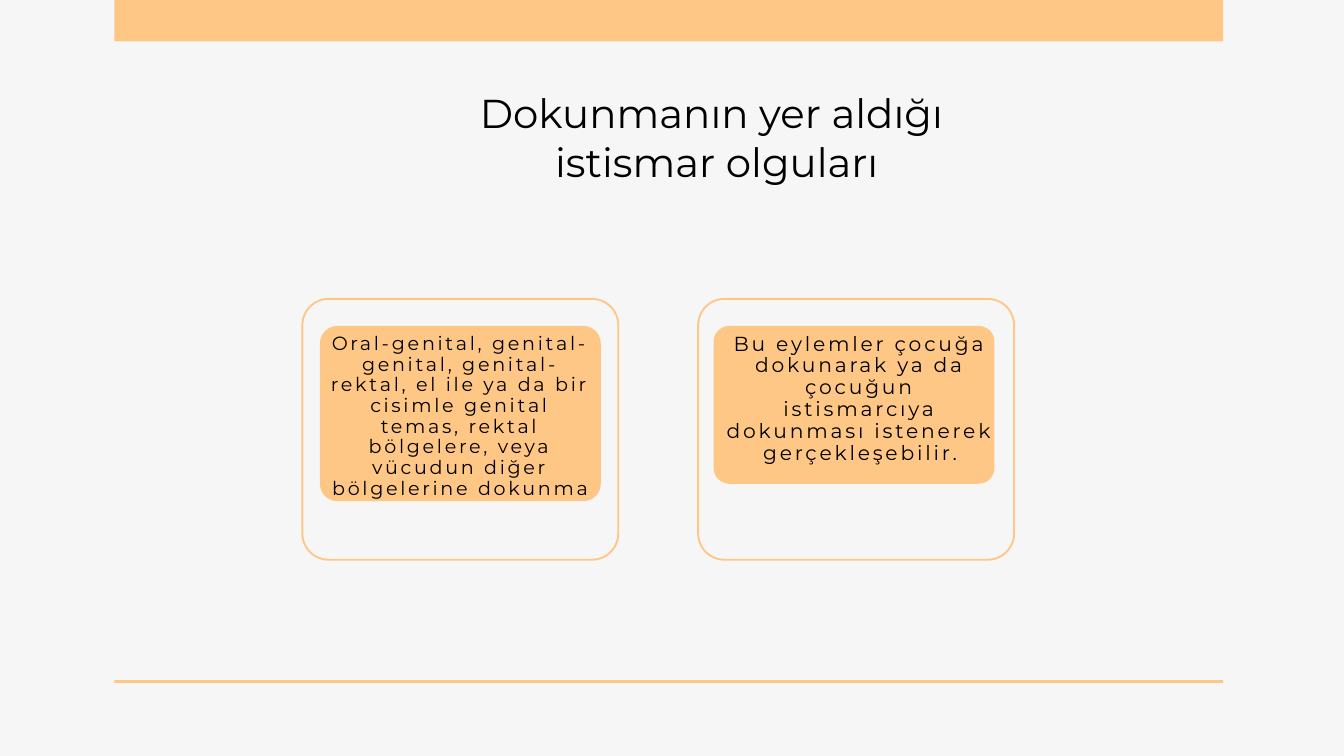
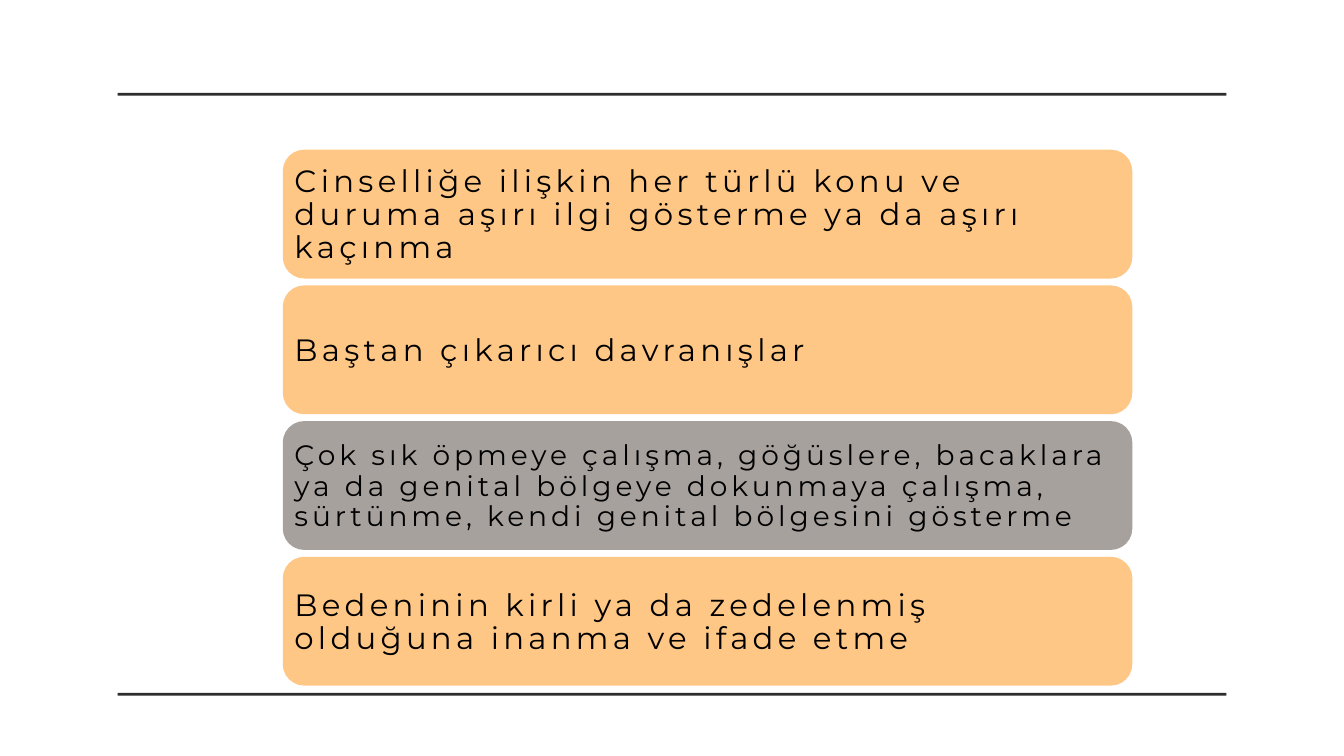
from pptx import Presentation
from pptx.dml.color import RGBColor
from pptx.enum.shapes import MSO_SHAPE
from pptx.enum.text import PP_ALIGN
from pptx.util import Cm, Pt

COLORS = {
    "paper": "F6F6F6", "white": "FFFFFF", "orange": "FFC786",
    "gray": "A7A19E", "dark": "2E2D2D", "text": "000000",
}
FONT = "Montserrat"

# Content
TITLE = ["Dokunmanın yer aldığı ", "istismar olguları"]
CARDS = [
    {
        "text": "Oral-genital, genital-genital, genital-rektal, el ile ya da bir cisimle "
                "genital temas, rektal bölgelere, veya vücudun diğer bölgelerine dokunma",
        "frame_left": 11.43, "note": (12.09, 12.32, 10.62, 6.63),
        "text_box": (12.34, 12.62, 10.11, 5.41), "style": "first_card",
    },
    {
        "text": "Bu eylemler çocuğa dokunarak ya da çocuğun istismarcıya "
                "dokunması istenerek gerçekleşebilir.",
        "frame_left": 26.39, "note": (26.97, 12.32, 10.62, 5.97),
        "text_box": (27.43, 12.6, 10.16, 4.93), "style": "second_card",
    },
]
# Text, number of lines, fill, text style
SIGNS = [
    ("Cinselliğe ilişkin her türlü konu ve duruma aşırı ilgi gösterme "
     "ya da aşırı kaçınma", 3, "orange", "sign"),
    ("Baştan çıkarıcı davranışlar", 1, "orange", "sign"),
    ("Çok sık öpmeye çalışma, göğüslere, bacaklara ya da genital bölgeye "
     "dokunmaya çalışma, sürtünme, kendi genital bölgesini gösterme",
     3, "gray", "long_sign"),
    ("Bedeninin kirli ya da zedelenmiş olduğuna inanma ve ifade etme",
     2, "orange", "sign"),
]

# Text styles: lengths in points
STYLES = {
    "title": {"size": 43.2, "line": 51.8, "tracking": 0, "align": PP_ALIGN.CENTER},
    "first_card": {"size": 20.5, "line": 22.1, "tracking": 2.9, "align": PP_ALIGN.CENTER},
    "second_card": {"size": 21.7, "line": 23.4, "tracking": 3, "align": PP_ALIGN.CENTER},
    "sign": {"size": 33, "line": 35.6, "tracking": 4.6, "align": PP_ALIGN.LEFT},
    "long_sign": {"size": 30.1, "line": 32.5, "tracking": 4.2, "align": PP_ALIGN.LEFT},
}

# Layout in centimetres
RULE_WIDTH, RULE_HEIGHT = 41.91, 0.11
FRAME_TOP, FRAME_WIDTH, FRAME_HEIGHT = 11.3, 11.94, 9.86
SIGN_LEFT, SIGN_TOP, SIGN_WIDTH, SIGN_HEIGHT = 10.69, 5.66, 32.11, 4.87
SIGN_PITCH, SIGN_PADDING, TEXT_DROP = 5.13, 0.44, 0.04


def rgb(name):
    return RGBColor.from_string(COLORS[name])


def add_slide(presentation, background):
    slide = presentation.slides.add_slide(presentation.slide_layouts[6])
    slide.background.fill.solid()
    slide.background.fill.fore_color.rgb = rgb(background)
    return slide


def add_block(slide, box, fill, radius=0.0, outline=None):
    kind = MSO_SHAPE.ROUNDED_RECTANGLE if radius else MSO_SHAPE.RECTANGLE
    shape = slide.shapes.add_shape(kind, *map(Cm, box))
    shape.shadow.inherit = False
    if radius:
        shape.adjustments[0] = radius / min(box[2:])
    shape.fill.solid()
    shape.fill.fore_color.rgb = rgb(fill)
    if outline:
        shape.line.color.rgb = rgb(outline)
        shape.line.width = Pt(2)
    else:
        shape.line.fill.background()
    return shape


def add_text(slide, box, lines, style_name):
    style = STYLES[style_name]
    frame = slide.shapes.add_textbox(*map(Cm, box)).text_frame
    frame_format = {"word_wrap": True, "margin_left": 0, "margin_top": 0,
                    "margin_right": 0, "margin_bottom": 0}
    for name, value in frame_format.items():
        setattr(frame, name, value)
    for index, line in enumerate(lines):
        paragraph = frame.add_paragraph() if index else frame.paragraphs[0]
        paragraph.alignment = style["align"]
        paragraph.line_spacing = Pt(style["line"])
        run = paragraph.add_run()
        run.text = line
        for name, value in {"name": FONT, "size": Pt(style["size"])}.items():
            setattr(run.font, name, value)
        run.font.color.rgb = rgb("text")
        if style["tracking"]:
            run._r.get_or_add_rPr().set("spc", str(round(style["tracking"] * 100)))


def add_rule(slide, left, top, color, height=RULE_HEIGHT):
    add_block(slide, (left, top, RULE_WIDTH, height), color)


def build_cases(presentation):
    slide = add_slide(presentation, "paper")
    # Top band and bottom rule
    add_rule(slide, 4.32, 0, "orange", height=1.57)
    add_rule(slide, 4.32, 25.71, "orange")
    # Outlined cards with a filled note
    for card in CARDS:
        frame = (card["frame_left"], FRAME_TOP, FRAME_WIDTH, FRAME_HEIGHT)
        add_block(slide, frame, "paper", radius=0.99, outline="orange")
        add_block(slide, card["note"], "orange", radius=card["note"][3] / 10)
        add_text(slide, card["text_box"], [card["text"]], card["style"])
    add_text(slide, (13.36, 3.35, 27.46, 3.66), TITLE, "title")


def build_signs(presentation):
    slide = add_slide(presentation, "white")
    for top in (3.51, 26.19):
        add_rule(slide, 4.45, top, "dark")
    # Stacked rows, each text centred in its row
    for index, (text, line_count, fill, style_name) in enumerate(SIGNS):
        top = SIGN_TOP + index * SIGN_PITCH
        add_block(slide, (SIGN_LEFT, top, SIGN_WIDTH, SIGN_HEIGHT), fill, radius=0.81)
        text_height = line_count * Pt(STYLES[style_name]["line"]).cm
        text_top = top + (SIGN_HEIGHT - text_height) / 2 + TEXT_DROP
        text_box = (SIGN_LEFT + SIGN_PADDING, text_top,
                    SIGN_WIDTH - 2 * SIGN_PADDING, text_height)
        add_text(slide, text_box, [text], style_name)


def main():
    presentation = Presentation()
    presentation.slide_width = Cm(50.8)
    presentation.slide_height = Cm(28.58)
    build_cases(presentation)
    build_signs(presentation)
    presentation.save("out.pptx")


if __name__ == "__main__":
    main()
